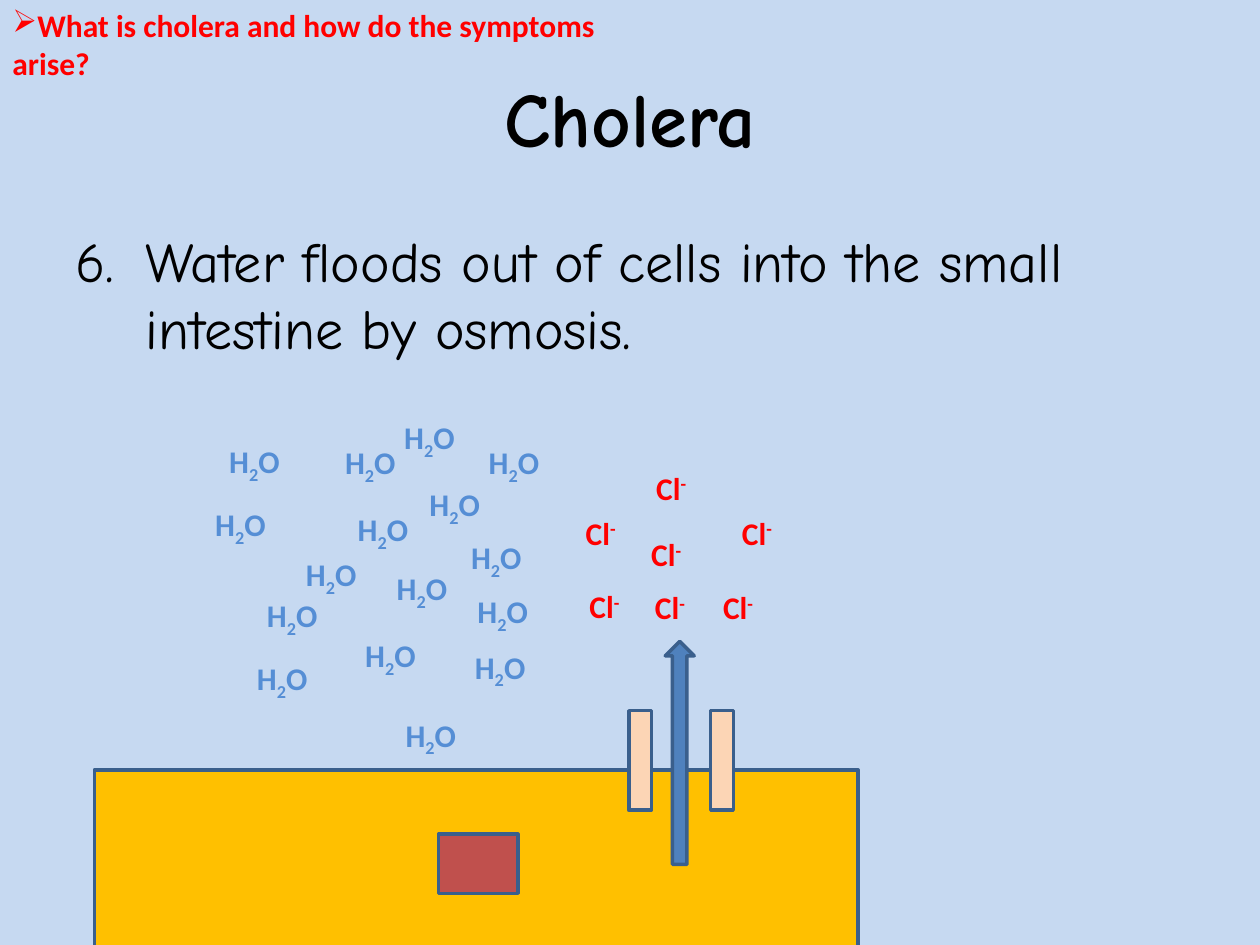
import pptx
import pptx.dml.color
import pptx.enum.shapes
import pptx.enum.text
import pptx.util
from lxml import etree
from pptx.oxml.ns import qn

SHAPE = pptx.enum.shapes.MSO_SHAPE
ALIGN = pptx.enum.text.PP_ALIGN
ANCHOR = pptx.enum.text.MSO_ANCHOR
AUTO = pptx.enum.text.MSO_AUTO_SIZE

COLUMNS, ROWS = 100, 75
UNIT = pptx.util.Inches(10) / COLUMNS

# Columns and rows from the corner of each group's box
WATER = [(10.4, 2.7), (1.2, 2.6), (0.1, 7.6), (20.4, 10.2), (12, 18),
         (7.3, 11.6), (20.7, 18.9), (14.5, 12.7), (21.8, 2.7), (11.4, 8),
         (17.1, 6), (4.2, 14.8), (20.9, 14.5), (15.1, 0.7), (15.2, 24.3),
         (3.4, 19.8)]
CHLORIDE = [(6.1, 0.7), (6, 10.2), (0.5, 4.3), (12.9, 4.3), (5.7, 6),
            (0.8, 10.1), (11.4, 10.2)]


def color(value):
    return pptx.dml.color.RGBColor.from_string(value)


def grid(box):
    return [round(n * UNIT) for n in box]


def add_text(slide, box, runs, size=18, font="Calibri", fill="000000", bold=False,
             align=ALIGN.LEFT, anchor=ANCHOR.TOP, wrap=True, grow=False):
    """Add a text box from (text, baseline percent) runs; return its paragraph."""
    tf = slide.shapes.add_textbox(*grid(box)).text_frame
    tf.word_wrap = wrap
    tf.auto_size = AUTO.SHAPE_TO_FIT_TEXT if grow else AUTO.NONE
    tf.vertical_anchor = anchor
    p = tf.paragraphs[0]
    p.alignment = align
    for text, baseline in runs:
        r = p.add_run()
        r.text = text
        r.font.size = pptx.util.Pt(size)
        r.font.name = font
        r.font.bold = bold
        r.font.color.rgb = color(fill)
        if baseline:
            r.font._element.set("baseline", str(baseline * 1000))
    return p


def add_bullet(p, tag, indent=0, **attributes):
    pPr = p._p.get_or_add_pPr()
    hang = round(indent * UNIT)
    pPr.set("marL", str(hang))
    pPr.set("indent", str(-hang))
    etree.SubElement(pPr, qn(tag), attributes)


def add_block(slide, box, x, y, w, h, fill, kind=SHAPE.RECTANGLE):
    """Add an outlined shape at an offset from the corner of box."""
    sp = slide.shapes.add_shape(kind, *grid((box[0] + x, box[1] + y, w, h)))
    sp.shadow.inherit = False
    sp.fill.solid()
    sp.fill.fore_color.rgb = color(fill)
    sp.line.color.rgb = color("3A5F8C")
    sp.line.width = pptx.util.Pt(2)


def add_heading(slide, box):
    add_text(slide, box, [("Cholera", 0)], size=44, font="Comic Neue", bold=True,
             align=ALIGN.CENTER, anchor=ANCHOR.MIDDLE)


def add_step(slide, box):
    text = "Water floods out of cells into the small intestine by osmosis."
    p = add_text(slide, box, [(text, 0)], size=32, font="Comic Neue")
    p.space_before = pptx.util.Pt(6.4)
    add_bullet(p, "a:buAutoNum", indent=5.6, type="arabicPeriod", startAt="6")


def add_question(slide, box):
    text = "What is cholera and how do the symptoms arise?"
    p = add_text(slide, box, [(text, 0)], fill="FF0000", bold=True, grow=True)
    add_bullet(p, "a:buChar", char="➢")


def add_cell(slide, box):
    """Draw the cell with its nucleus, and the channel in its membrane."""
    add_block(slide, box, 0, 0, *box[2:], "FFC000")
    add_block(slide, box, 27.3, 5.1, 6.3, 4.7, "C0504D")
    for x in (42.4, 48.9):
        add_block(slide, box, x, -4.7, 1.8, 7.9, "FCD5B5")
    add_block(slide, box, 45.3, -10.2, 2.3, 17.7, "4F81BD", SHAPE.UP_ARROW)


def add_particles(slide, box, places, width, runs, fill):
    for x, y in places:
        add_text(slide, (box[0] + x, box[1] + y, width, 4), runs, fill=fill,
                 bold=True, wrap=False, grow=True)


def main():
    prs = pptx.Presentation()
    prs.slide_width = round(COLUMNS * UNIT)
    prs.slide_height = round(ROWS * UNIT)
    slide = prs.slides.add_slide(prs.slide_layouts[6])
    slide.background.fill.solid()
    slide.background.fill.fore_color.rgb = color("C6D9F1")

    add_heading(slide, (5, 3, 90, 12.5))
    add_step(slide, (5, 17.5, 90, 49.5))
    add_question(slide, (0, 0, 50, 7.1))
    add_cell(slide, (7.5, 61.1, 60.6, 15))
    add_particles(slide, (45, 36), CHLORIDE, 4.4, [("Cl", 0), ("-", 30)], "FF0000")
    add_particles(slide, (16, 32), WATER, 6.2,
                  [("H", 0), ("2", -25), ("O", 0)], "558ED5")
    prs.save("out.pptx")


if __name__ == "__main__":
    main()
